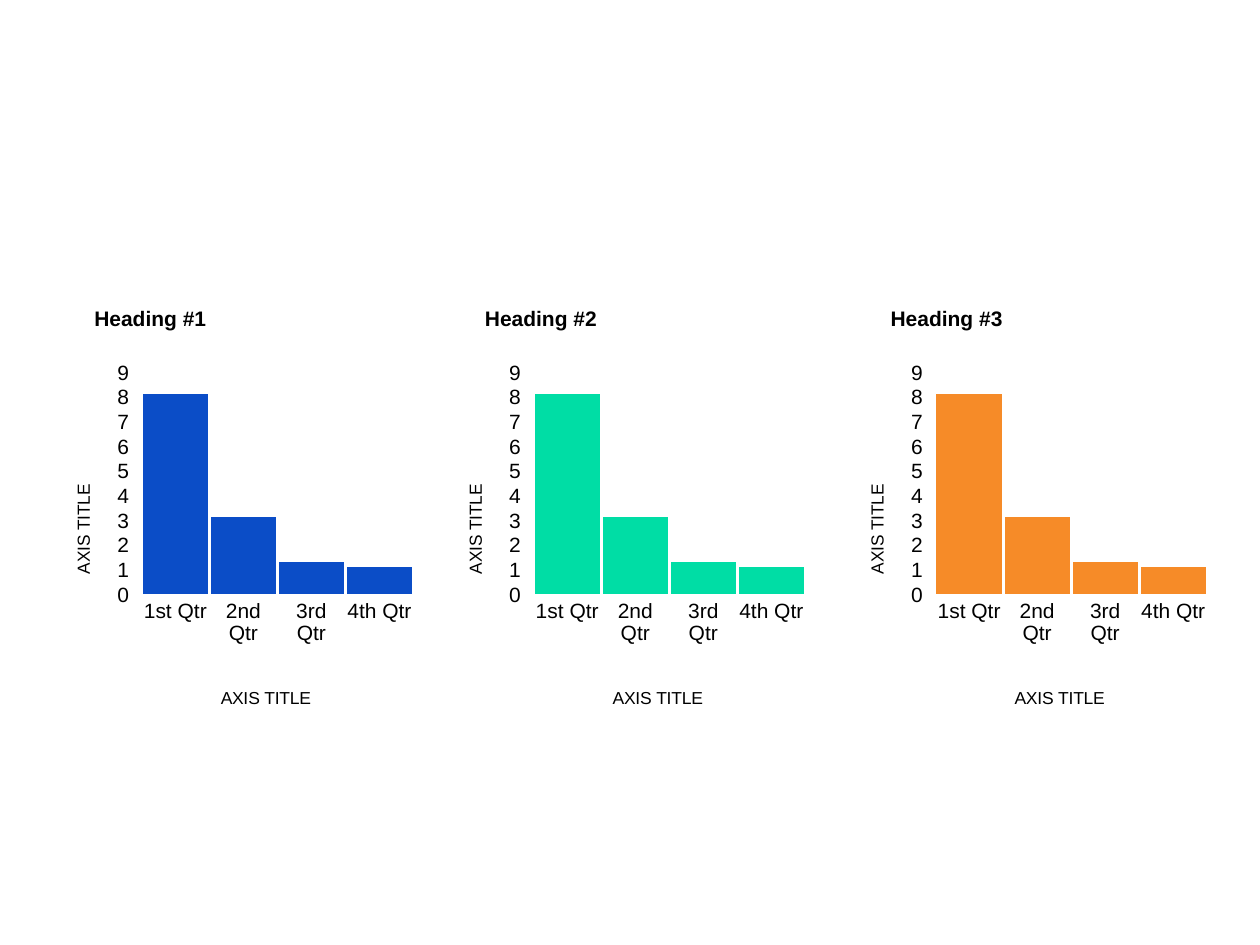
"""Build a slide with three headed quarterly column charts."""
from lxml import etree
from pptx import Presentation
from pptx.chart.data import CategoryChartData
from pptx.dml.color import RGBColor
from pptx.enum import chart as ec
from pptx.oxml.ns import qn
from pptx.util import Inches, Pt

BLACK = RGBColor(0x00, 0x00, 0x00)
WHITE = RGBColor(0xFF, 0xFF, 0xFF)
GREY = RGBColor(0xD9, 0xD9, 0xD9)
BLUE = RGBColor(0x0B, 0x4D, 0xC7)
GREEN = RGBColor(0x00, 0xDD, 0xA5)
ORANGE = RGBColor(0xF6, 0x8B, 0x28)


def style_font(font, size, bold=False):
    font.name, font.size, font.bold = "Arial", Pt(size), bold
    font.color.rgb = BLACK


def set_layout(parent, index, **values):
    for old in parent.findall(qn("c:layout")):
        parent.remove(old)
    layout = etree.Element(qn("c:layout"))
    parent.insert(index, layout)
    manual = etree.SubElement(layout, qn("c:manualLayout"))
    for tag, val in values.items():
        etree.SubElement(manual, qn(f"c:{tag}")).set("val", str(val))


prs = Presentation()
prs.slide_width, prs.slide_height = Inches(10), Inches(7.5)
s = prs.slides.add_slide(prs.slide_layouts[6])

data = CategoryChartData()
data.categories = ["1st Qtr", "2nd Qtr", "3rd Qtr", "4th Qtr"]
data.add_series("Series 1", (8.2, 3.2, 1.4, 1.2))

panels = [
    ("Heading #1", 0.46, 0.65, BLUE),
    ("Heading #2", 3.57, 3.75, GREEN),
    ("Heading #3", 6.76, 6.97, ORANGE),
]
for heading, chart_left, heading_left, color in panels:
    chart = s.shapes.add_chart(
        ec.XL_CHART_TYPE.COLUMN_CLUSTERED, Inches(chart_left), Inches(2.82),
        Inches(2.88), Inches(2.84), data).chart
    chart.has_legend = chart.has_title = False
    style_font(chart.font, 10)
    set_layout(chart._chartSpace.chart.plotArea, 0, layoutTarget="inner",
               xMode="edge", yMode="edge", x=0.23, y=0.05, w=0.75, h=0.63)

    plot = chart.plots[0]
    plot.gap_width = 0
    plot.vary_by_categories = False
    series = plot.series[0]
    series.format.fill.solid()
    series.format.fill.fore_color.rgb = color
    series.format.line.color.rgb = WHITE
    series.format.line.width = Pt(1.5)

    cat, val = chart.category_axis, chart.value_axis
    for axis, x, y in ((cat, 0.44, 0.93), (val, 0.03, 0.36)):
        axis.has_major_gridlines = False
        style_font(axis.tick_labels.font, 12)
        tf = axis.axis_title.text_frame
        tf.text = "AXIS TITLE"
        style_font(tf.paragraphs[0].runs[0].font, 10)
        set_layout(axis.axis_title._element, 1, xMode="edge", yMode="edge", x=x, y=y)
    cat.major_tick_mark = ec.XL_TICK_MARK.NONE
    cat.format.line.color.rgb = GREY
    cat.format.line.width = Pt(0.75)
    val.axis_title._element.find(".//" + qn("a:bodyPr")).set("rot", "-5400000")
    val.major_tick_mark = ec.XL_TICK_MARK.OUTSIDE
    val.minimum_scale, val.maximum_scale, val.major_unit = 0, 9, 1
    val.format.line.fill.background()

    tf = s.shapes.add_textbox(
        Inches(heading_left), Inches(2.4), Inches(1.79), Inches(0.33)).text_frame
    tf.word_wrap = True
    tf.text = heading
    p = tf.paragraphs[0]
    p.line_spacing = 0.9
    style_font(p.runs[0].font, 12, bold=True)

prs.save("out.pptx")
